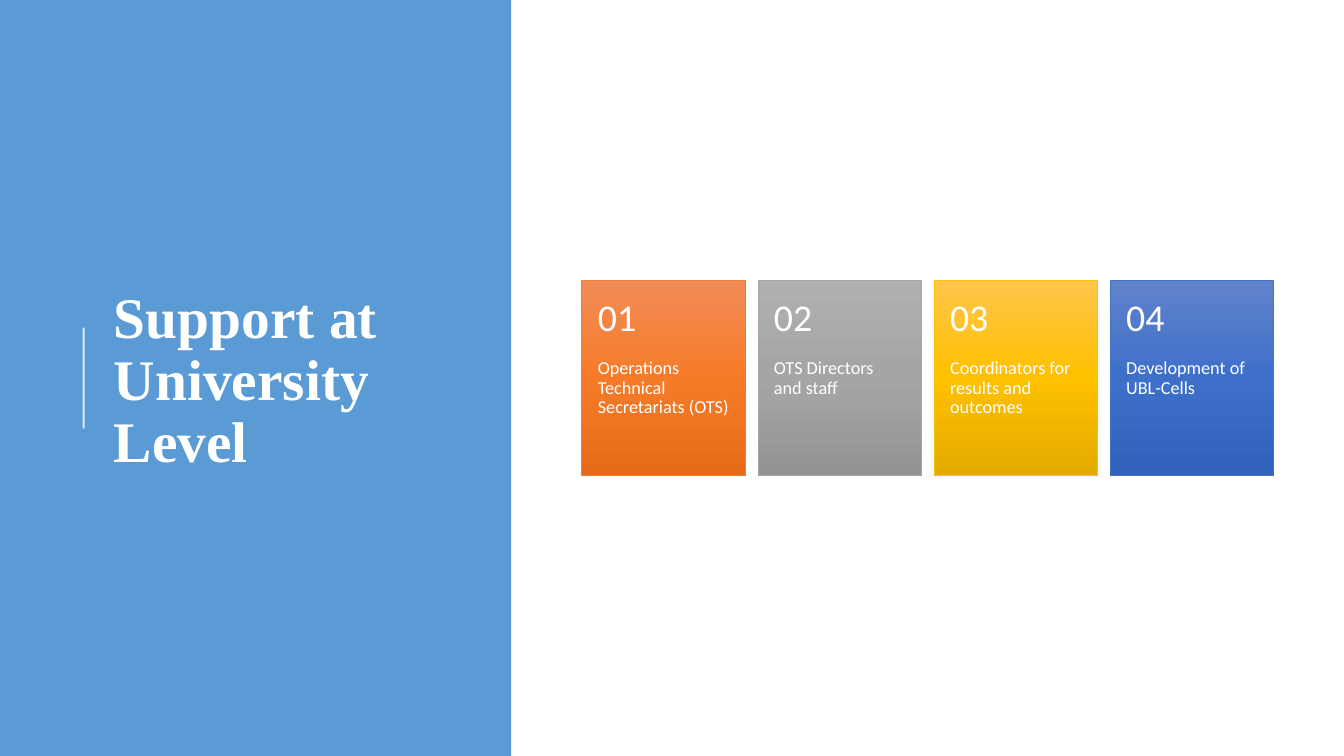
from copy import deepcopy

from pptx import Presentation
from pptx.dml.color import RGBColor
from pptx.enum.shapes import MSO_CONNECTOR as Connector, MSO_SHAPE as Preset
from pptx.enum.text import MSO_ANCHOR as Anchor, MSO_AUTO_SIZE as AutoSize, PP_ALIGN as Align
from pptx.oxml.ns import qn
from pptx.util import Inches, Pt
from lxml.etree import SubElement

WHITE = "FFFFFF"
PANEL_BLUE = "5B9BD5"

# Card row: label, gradient from top to bottom, outline
CARDS = [
    ("Operations Technical Secretariats (OTS)", ("F18C57", "F67B28", "E56C19"), "ED7D31"),
    ("OTS Directors and staff", ("AFAFAF", "A5A5A5", "939393"), "A5A5A5"),
    ("Coordinators for results and outcomes", ("FFC64B", "FFC000", "E3AB00"), "FFC000"),
    ("Development of UBL-Cells", ("6183CB", "3E70CA", "3062BB"), "4472C4"),
]
FIRST_LEFT, LAST_LEFT = 5.77, 11.01
CARD_TOP, CARD_WIDTH, CARD_HEIGHT = 2.78, 1.62, 1.94
NUMBER_HEIGHT = 0.78


def colour(value):
    return RGBColor.from_string(value)


def place(item, left, top, width, height):
    item.left, item.top = Inches(left), Inches(top)
    item.width, item.height = Inches(width), Inches(height)


def add_rectangle(shapes, left, top, width, height):
    box = shapes.add_shape(Preset.RECTANGLE, Inches(left), Inches(top),
                           Inches(width), Inches(height))
    box.shadow.inherit = False
    return box


def fill_gradient(box, colours):
    box.fill.gradient()
    box.fill.gradient_angle = 270
    stop_list = box._element.spPr.find(qn("a:gradFill")).find(qn("a:gsLst"))
    stop_list.insert(1, deepcopy(stop_list[0]))
    for stop, position, value in zip(box.fill.gradient_stops, (0, 0.5, 1), colours):
        stop.position = position
        stop.color.rgb = colour(value)


def write_text(frame, text, size, font, anchor, bold=False):
    frame.word_wrap = True
    frame.auto_size = AutoSize.NONE
    frame.vertical_anchor = anchor
    para = frame.paragraphs[0]
    para.alignment = Align.LEFT
    para.line_spacing = 0.9
    span = para.add_run()
    span.text = text
    span.font.size = Pt(size)
    span.font.name = font
    span.font.bold = bold
    span.font.color.rgb = colour(WHITE)


def add_label(shapes, text, size, left, top, height, anchor, inset_top, inset_bottom):
    box = shapes.add_textbox(Inches(left), Inches(top), Inches(CARD_WIDTH), Inches(height))
    frame = box.text_frame
    frame.margin_left = frame.margin_right = Inches(0.16)
    frame.margin_top, frame.margin_bottom = Inches(inset_top), Inches(inset_bottom)
    write_text(frame, text, size, "Calibri", anchor)


def add_card(shapes, left, number, label, colours, outline):
    box = add_rectangle(shapes, left, CARD_TOP, CARD_WIDTH, CARD_HEIGHT)
    fill_gradient(box, colours)
    box.line.color.rgb = colour(outline)
    box.line.width = Pt(0.5)
    add_label(shapes, label, 13, left, CARD_TOP + NUMBER_HEIGHT,
              CARD_HEIGHT - NUMBER_HEIGHT, Anchor.TOP, 0, 0.36)
    add_label(shapes, f"{number:02}", 27, left, CARD_TOP, NUMBER_HEIGHT,
              Anchor.MIDDLE, 0.18, 0.18)


def add_accent_line(shapes):
    line = shapes.add_connector(Connector.STRAIGHT, Inches(0.83), Inches(4.25),
                                Inches(0.83), Inches(3.25))
    line.line.color.rgb = colour(WHITE)
    line.line.width = Pt(1.5)
    properties = line._element.spPr
    solid = next(properties.iter(qn("a:srgbClr")))
    SubElement(solid, qn("a:alpha")).set("val", "80000")
    SubElement(properties, qn("a:effectLst"))


def main():
    deck = Presentation()
    deck.slide_width, deck.slide_height = Inches(13.33), Inches(7.5)
    page = deck.slides.add_slide(deck.slide_layouts[5])

    # Blue side panel with its accent line
    panel = add_rectangle(page.shapes, 0, 0, 5.07, 7.5)
    panel.fill.solid()
    panel.fill.fore_color.rgb = colour(PANEL_BLUE)
    panel.line.fill.background()
    add_accent_line(page.shapes)

    # Title, in front of the panel
    title = page.shapes.title
    place(title, 1.03, 0.78, 3.69, 6.02)
    write_text(title.text_frame, "Support at University Level", 41,
               "Times New Roman", Anchor.MIDDLE, bold=True)
    page.shapes._spTree.append(title._element)

    # Row of numbered cards
    row = page.shapes.add_group_shape()
    pitch = (LAST_LEFT - FIRST_LEFT) / (len(CARDS) - 1)
    for index, (label, colours, outline) in enumerate(CARDS):
        add_card(row.shapes, FIRST_LEFT + index * pitch, index + 1, label, colours, outline)

    deck.save("out.pptx")


if __name__ == "__main__":
    main()
